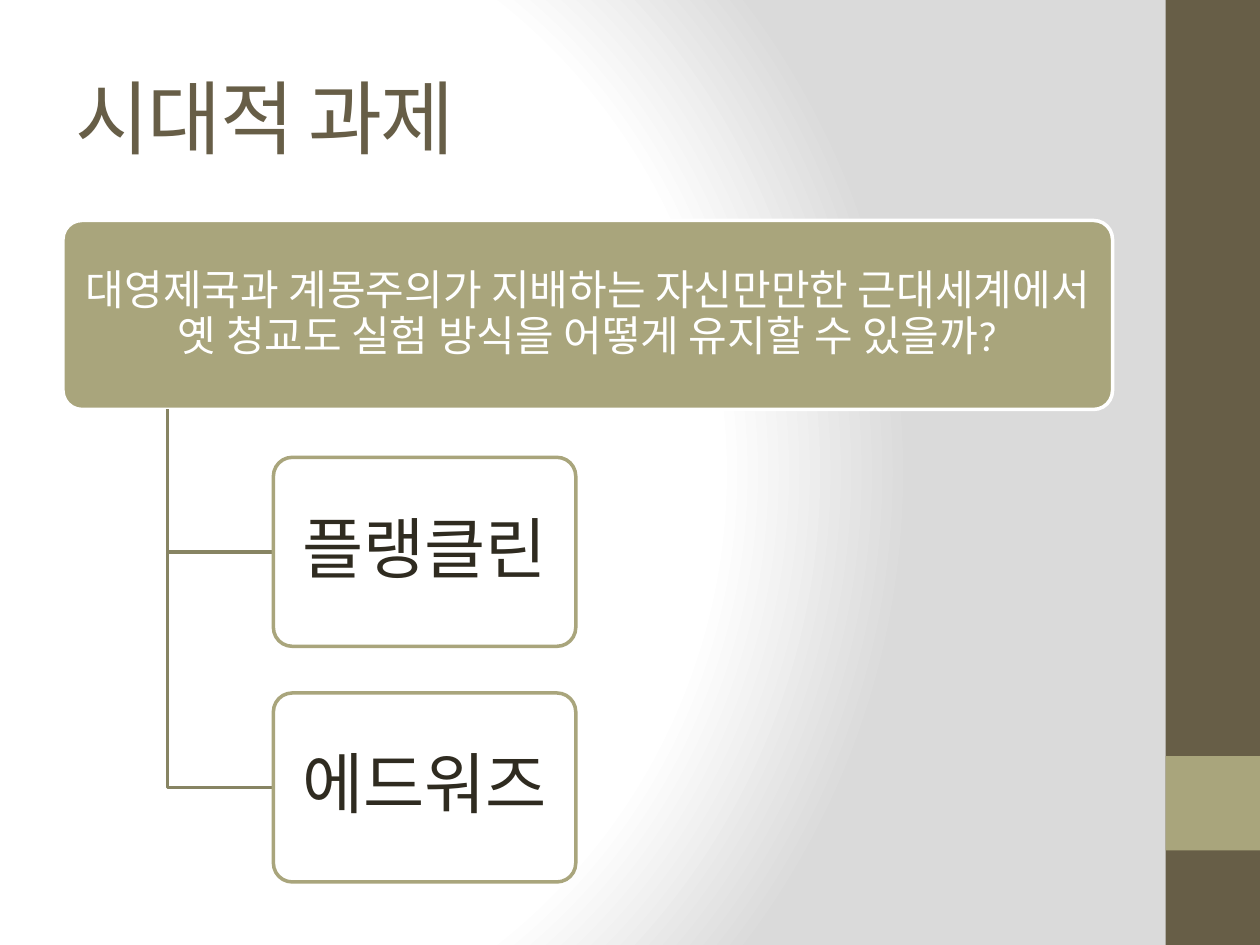
from dataclasses import dataclass

from pptx import Presentation
from pptx.dml.color import RGBColor
from pptx.enum.shapes import MSO_SHAPE as Preset
from pptx.enum.text import MSO_ANCHOR as Anchor, MSO_AUTO_SIZE as AutoSize, PP_ALIGN as Align
from pptx.oxml import parse_xml
from pptx.oxml.ns import nsdecls, qn
from pptx.util import Inches, Pt

BROWN = "675E47"
OLIVE = "A9A57C"
WHITE = "FFFFFF"
TRUNK_X = 1.33
ROOT_BOTTOM = 3.25


@dataclass
class Box:
    """A rounded box of the hierarchy, in inches and points."""
    text: str
    left: float
    top: float
    width: float
    fill: str
    line: str
    color: str
    size: float
    inset_x: float
    inset_y: float
    opacity: int = 100
    height: float = 1.5


def color_of(value: str) -> RGBColor:
    """Turn a hex string into a colour."""
    return RGBColor.from_string(value)


def write_text(shape, text: str, *, font: str, size: float, color: str,
               align=Align.LEFT, line_spacing: float = 1.0, spacing: int = 0) -> None:
    """Write one middle-anchored paragraph into a shape."""
    frame = shape.text_frame
    frame.word_wrap = True
    frame.auto_size = AutoSize.NONE
    frame.vertical_anchor = Anchor.MIDDLE
    paragraph = frame.paragraphs[0]
    paragraph.alignment = align
    paragraph.line_spacing = line_spacing
    run = paragraph.add_run()
    run.text = text
    run.font.name = font
    run.font.size = Pt(size)
    run.font.color.rgb = color_of(color)
    if spacing:
        run.font._element.set("spc", str(spacing * 100))


def set_background(slide) -> None:
    """Give the slide its radial white-to-grey gradient."""
    slide.background.fill.solid()
    properties = slide.element.find(".//" + qn("p:bgPr"))
    stops = "".join(
        f'<a:gs pos="{position * 1000}"><a:srgbClr val="{color}"/></a:gs>'
        for position, color in ((0, WHITE), (75, WHITE), (100, "DADADA")))
    gradient = parse_xml(
        f'<a:gradFill {nsdecls("a")} rotWithShape="1"><a:gsLst>{stops}</a:gsLst>'
        '<a:path path="circle"><a:fillToRect l="20000" t="50000" r="100000" b="50000"/>'
        '</a:path></a:gradFill>')
    properties.replace(properties.find(qn("a:solidFill")), gradient)


def add_bar(slide, top: float, height: float, color: str) -> None:
    """Draw a block of the right-hand side bar."""
    bar = slide.shapes.add_shape(
        Preset.RECTANGLE, Inches(9.25), Inches(top), Inches(0.75), Inches(height))
    bar.shadow.inherit = False
    bar.fill.solid()
    bar.fill.fore_color.rgb = color_of(color)
    bar.line.fill.background()


def add_box(slide, box: Box) -> None:
    """Draw a rounded box with its centred text."""
    shape = slide.shapes.add_shape(
        Preset.ROUNDED_RECTANGLE, Inches(box.left), Inches(box.top),
        Inches(box.width), Inches(box.height))
    shape.adjustments[0] = 0.1
    shape.shadow.inherit = False
    shape.fill.solid()
    shape.fill.fore_color.rgb = color_of(box.fill)
    if box.opacity < 100:
        fill_color = shape.element.spPr.find(qn("a:solidFill"))[0]
        fill_color.append(parse_xml(
            f'<a:alpha {nsdecls("a")} val="{box.opacity * 1000}"/>'))
    shape.line.color.rgb = color_of(box.line)
    shape.line.width = Pt(2)
    frame = shape.text_frame
    frame.margin_left = frame.margin_right = Inches(box.inset_x)
    frame.margin_top = frame.margin_bottom = Inches(box.inset_y)
    write_text(shape, box.text, font="Calibri", size=box.size, color=box.color,
               align=Align.CENTER, line_spacing=0.9)


def add_branch(slide, box: Box) -> None:
    """Draw the elbow line from the root box to a child box."""
    middle = box.top + box.height / 2
    builder = slide.shapes.build_freeform(Inches(TRUNK_X), Inches(ROOT_BOTTOM))
    builder.add_line_segments(
        [(Inches(TRUNK_X), Inches(middle)), (Inches(box.left), Inches(middle))], close=False)
    branch = builder.convert_to_shape()
    branch.shadow.inherit = False
    branch.fill.background()
    branch.line.color.rgb = color_of("878463")
    branch.line.width = Pt(2)


def main() -> None:
    """Build and save the slide."""
    presentation = Presentation()
    presentation.slide_width, presentation.slide_height = Inches(10), Inches(7.5)
    slide = presentation.slides.add_slide(presentation.slide_layouts[5])
    set_background(slide)
    add_bar(slide, 0, 7.5, BROWN)
    add_bar(slide, 6, 0.75, OLIVE)

    title = slide.shapes.title
    title.left, title.top = Inches(0.5), Inches(0.3)
    title.width, title.height = Inches(8.33), Inches(1.25)
    write_text(title, "시대적 과제", font="Cambria", size=46, color=BROWN, spacing=-1)

    add_box(slide, Box(
        "대영제국과 계몽주의가 지배하는 자신만만한 근대세계에서 옛 청교도 실험 방식을 어떻게 유지할 수 있을까?",
        0.5, 1.75, 8.33, OLIVE, WHITE, WHITE, 24, 0.05, 0.03))
    for index, name in enumerate(("플랭클린", "에드워즈")):
        child = Box(name, 2.17, 3.63 + index * 1.87, 2.4, WHITE, OLIVE, "2F2B20",
                    38, 0.08, 0.05, opacity=90)
        add_branch(slide, child)
        add_box(slide, child)

    presentation.save("out.pptx")


if __name__ == "__main__":
    main()
